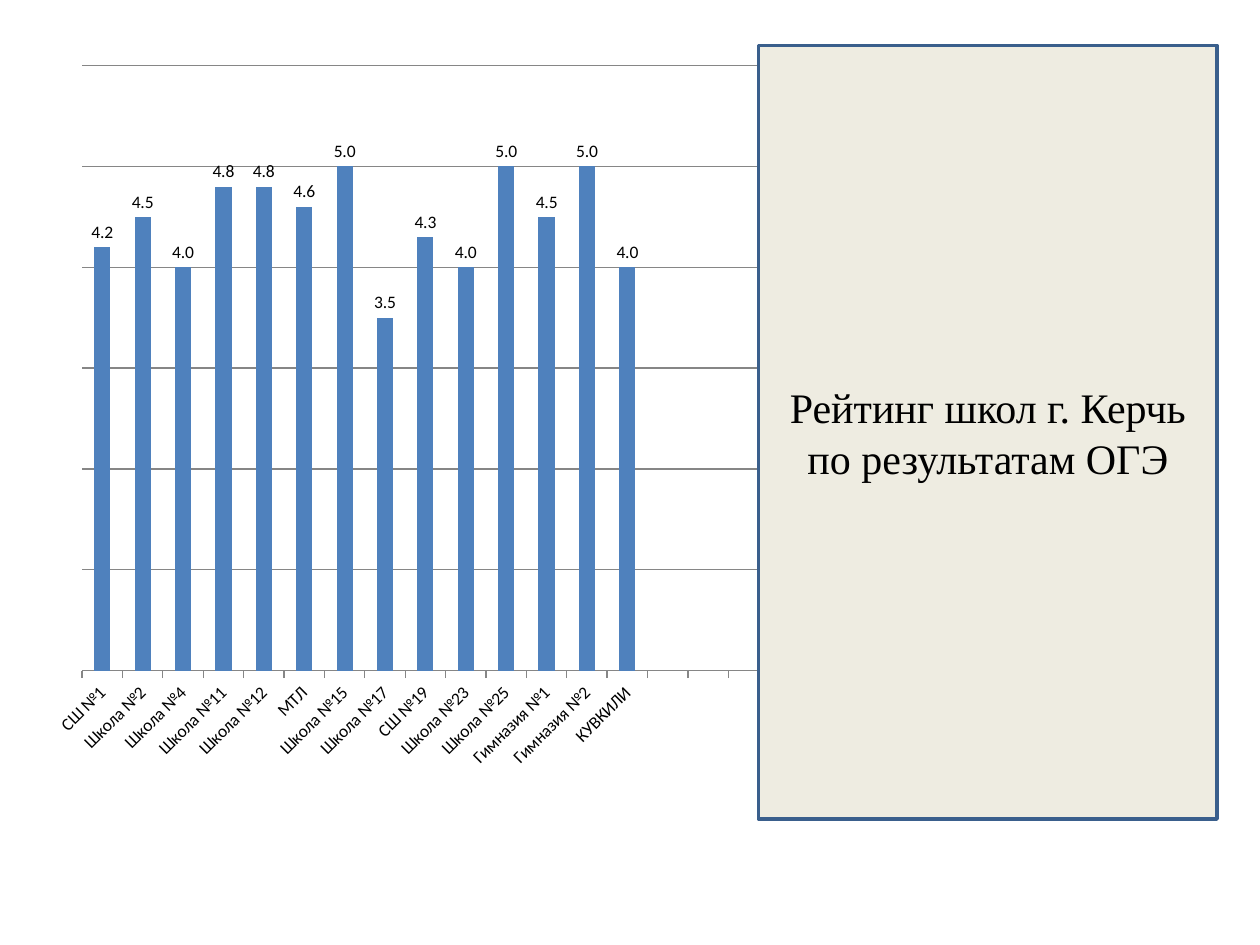
from dataclasses import dataclass

from lxml import etree
from pptx import Presentation
from pptx import util as u
from pptx.chart import data as chart_data
from pptx.dml import color
from pptx.enum import chart as charts
from pptx.enum import shapes, text
from pptx.oxml import ns

Pt = u.Pt


@dataclass(frozen=True)
class Theme:
    """Colours, fonts and type sizes of the slide."""
    bar: str = "4F81BD"
    grid: str = "868686"
    panel: str = "EEECE1"
    border: str = "3A5F8C"
    ink: str = "000000"
    chart_font: str = "Calibri"
    title_font: str = "Times New Roman"
    chart_size: int = 10
    title_size: int = 24


THEME = Theme()
AXIS_SLOTS = 23
RATINGS = {
    "СШ №1": 4.2, "Школа №2": 4.5, "Школа №4": 4, "Школа №11": 4.8,
    "Школа №12": 4.8, "МТЛ": 4.6, "Школа №15": 5, "Школа №17": 3.5,
    "СШ №19": 4.3, "Школа №23": 4, "Школа №25": 5, "Гимназия №1": 4.5,
    "Гимназия №2": 5, "КУВКИЛИ": 4,
}


def rgb(value):
    """Turn a hex string into a colour."""
    return color.RGBColor.from_string(value)


def style_font(font, face, size):
    """Apply face, size and ink colour to a font."""
    font.name, font.size = face, Pt(size)
    font.color.rgb = rgb(THEME.ink)


def style_line(line, value, width):
    """Apply colour and width to a line."""
    line.color.rgb = rgb(value)
    line.width = Pt(width)


def place_plot(chart, **fractions):
    """Fix the inner plot area as fractions of the chart."""
    plot_area = chart._chartSpace.chart.plotArea
    for old in plot_area.findall(ns.qn("c:layout")):
        plot_area.remove(old)
    layout = etree.Element(ns.qn("c:layout"))
    manual = etree.SubElement(layout, ns.qn("c:manualLayout"))
    settings = {"layoutTarget": "inner", "xMode": "edge", "yMode": "edge", **fractions}
    for tag, value in settings.items():
        etree.SubElement(manual, ns.qn(f"c:{tag}")).set("val", str(value))
    plot_area.insert(0, layout)


def style_axes(chart):
    """Slant the school names and keep only gridlines of the value axis."""
    schools, scores = chart.category_axis, chart.value_axis
    schools.major_tick_mark = charts.XL_TICK_MARK.OUTSIDE
    style_line(schools.format.line, THEME.grid, 0.75)
    style_font(schools.tick_labels.font, THEME.chart_font, THEME.chart_size)
    schools._element.find(f"{ns.qn('c:txPr')}/{ns.qn('a:bodyPr')}").set("rot", "-2700000")
    scores.minimum_scale, scores.maximum_scale, scores.major_unit = 0, 6, 1
    scores.has_major_gridlines = True
    style_line(scores.major_gridlines.format.line, THEME.grid, 0.75)
    scores.visible = False


def add_rating_chart(slide, left, top, width, height):
    """Add the column chart of school ratings."""
    spare = AXIS_SLOTS - len(RATINGS)
    ratings = chart_data.CategoryChartData(number_format="0.0")
    ratings.categories = [*RATINGS, *[""] * spare]
    ratings.add_series("Series 1", [*RATINGS.values(), *[None] * spare])
    chart = slide.shapes.add_chart(
        charts.XL_CHART_TYPE.COLUMN_CLUSTERED,
        Pt(left), Pt(top), Pt(width), Pt(height), ratings).chart
    chart.has_legend = chart.has_title = False
    style_font(chart.font, THEME.chart_font, THEME.chart_size)
    bars = chart.plots[0]
    bars.gap_width, bars.vary_by_categories = 150, False
    fill = bars.series[0].format.fill
    fill.solid()
    fill.fore_color.rgb = rgb(THEME.bar)
    labels = bars.series[0].data_labels
    labels.show_value = True
    labels.position = charts.XL_LABEL_POSITION.OUTSIDE_END
    labels.number_format, labels.number_format_is_linked = "0.0", False
    style_font(labels.font, THEME.chart_font, THEME.chart_size)
    style_axes(chart)
    place_plot(chart, x=0.04, y=0.02, w=0.95, h=0.72)
    place_plot(chart, x=0.039, y=0.024, w=0.955, h=0.718)


def add_title_panel(slide, title, left, top, width, height):
    """Add the framed panel with the slide title."""
    panel = slide.shapes.add_shape(
        shapes.MSO_SHAPE.RECTANGLE, Pt(left), Pt(top), Pt(width), Pt(height))
    panel.shadow.inherit = False
    panel.fill.solid()
    panel.fill.fore_color.rgb = rgb(THEME.panel)
    style_line(panel.line, THEME.border, 2)
    frame = panel.text_frame
    frame.word_wrap = True
    frame.vertical_anchor = text.MSO_ANCHOR.MIDDLE
    paragraph = frame.paragraphs[0]
    paragraph.alignment = text.PP_ALIGN.CENTER
    run = paragraph.add_run()
    run.text = title
    style_font(run.font, THEME.title_font, THEME.title_size)


def main():
    """Build and save the slide."""
    deck = Presentation()
    deck.slide_width, deck.slide_height = Pt(720), Pt(540)
    slide = deck.slides.add_slide(deck.slide_layouts[6])
    add_rating_chart(slide, 25.2, 26, 556, 481.5)
    add_title_panel(slide, "Рейтинг школ г. Керчь по результатам ОГЭ", 433.5, 26, 262, 442)
    deck.save("out.pptx")


if __name__ == "__main__":
    main()
